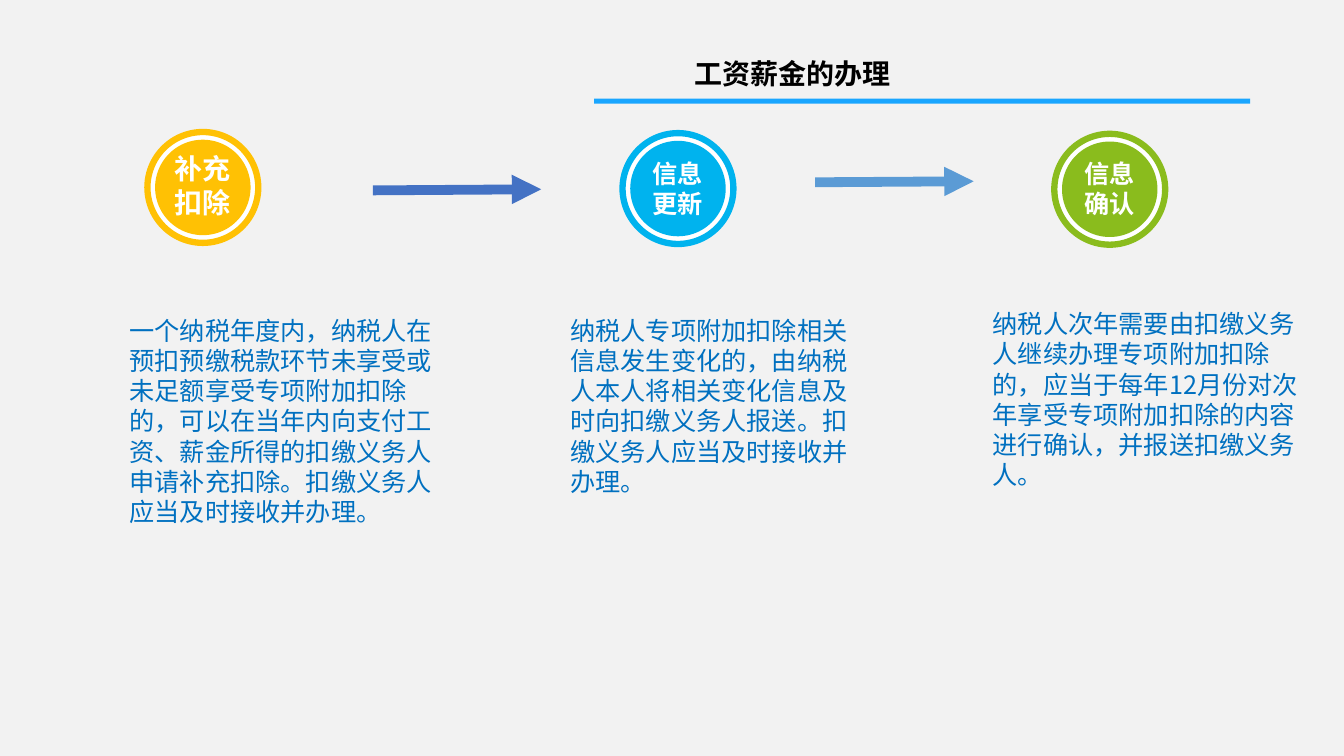
import pptx
import pptx.util
import pptx.dml.color
import pptx.enum.lang
import pptx.enum.shapes
import pptx.enum.text
import pptx.oxml
import pptx.oxml.ns

Pt = pptx.util.Pt
RGB = pptx.dml.color.RGBColor.from_string
SHAPE = pptx.enum.shapes.MSO_SHAPE
ALIGN = pptx.enum.text.PP_ALIGN
ANCHOR = pptx.enum.text.MSO_ANCHOR
FONT = "Noto Sans CJK SC"
COLORS = {
    "background": "F2F2F2", "rule": "1AA6FF", "title": "000000",
    "body": "0070C0", "white": "FFFFFF",
    "yellow": "FFC104", "cyan": "00B3EE", "green": "8ABC1D",
    "dark_arrow": "4472C4", "light_arrow": "5B9BD5",
}


def write(shape, lines, size, color, bold, align, anchor, latin=FONT):
    frame = shape.text_frame
    frame.auto_size = pptx.enum.text.MSO_AUTO_SIZE.NONE
    frame.word_wrap = True
    frame.vertical_anchor = anchor
    for index, line in enumerate(lines):
        paragraph = frame.add_paragraph() if index else frame.paragraphs[0]
        paragraph.alignment = align
        # Keep punctuation inside the right margin
        paragraph._p.get_or_add_pPr().set("hangingPunct", "0")
        run = paragraph.add_run()
        run.text = line
        run.font.size = Pt(size)
        run.font.bold = bold
        run.font.color.rgb = RGB(COLORS[color])
        run.font.name = latin
        run.font.language_id = pptx.enum.lang.MSO_LANGUAGE_ID.SIMPLIFIED_CHINESE
        east_asian = pptx.oxml.parse_xml(
            f'<a:ea {pptx.oxml.ns.nsdecls("a")} typeface="{FONT}"/>')
        run._r.get_or_add_rPr().append(east_asian)


def add_filled(kind, left, top, width, height, fill, outline=None):
    shape = slide.shapes.add_shape(kind, Pt(left), Pt(top), Pt(width), Pt(height))
    shape.shadow.inherit = False
    shape.fill.solid()
    shape.fill.fore_color.rgb = RGB(COLORS[fill])
    if outline:
        shape.line.color.rgb = RGB(COLORS[outline])
        shape.line.width = Pt(4.5)
    else:
        shape.line.fill.background()


presentation = pptx.Presentation()
presentation.slide_width = Pt(960)
presentation.slide_height = Pt(540)
slide = presentation.slides.add_slide(presentation.slide_layouts[5])
slide.background.fill.solid()
slide.background.fill.fore_color.rgb = RGB(COLORS["background"])

# Title and rule
title = slide.shapes.title
title.left, title.top, title.width, title.height = Pt(489), Pt(36.7), Pt(356), Pt(31)
write(title, ["工资薪金的办理"], 20, "title", True, ALIGN.LEFT, ANCHOR.TOP, "Arial")
add_filled(SHAPE.RECTANGLE, 424.3, 70.4, 468.7, 3.6, "rule")

# Arrows between the steps
for start_x, start_y, end_x, end_y, color in [
    (266.4, 136, 386.6, 135.2, "dark_arrow"),
    (582.3, 130.2, 695.5, 129.5, "light_arrow"),
]:
    arrow = slide.shapes.add_connector(
        pptx.enum.shapes.MSO_CONNECTOR.STRAIGHT,
        Pt(start_x), Pt(start_y), Pt(end_x), Pt(end_y))
    arrow.line.color.rgb = RGB(COLORS[color])
    arrow.line.width = Pt(7)
    namespace = pptx.oxml.ns.nsdecls("a")
    arrow.line._get_or_add_ln().append(
        pptx.oxml.parse_xml(f'<a:tailEnd {namespace} type="triangle"/>'))
    arrow._element.spPr.append(pptx.oxml.parse_xml(f"<a:effectLst {namespace}/>"))

# Step badges: centre, label centre, colour, label, label size
RING, DISC, LABEL = 79.2, 68.2, 56
for center_x, center_y, label_x, label_y, color, lines, size in [
    (144.9, 133.9, 144.7, 132.2, "yellow", ["补充", "扣除"], 20),
    (484.3, 134.7, 483.9, 134.5, "cyan", ["信息", "更新"], 18),
    (792.7, 135.2, 792.5, 134.8, "green", ["信息", "确认"], 18),
]:
    for diameter, fill, outline in [(RING, "white", color), (DISC, color, None)]:
        add_filled(SHAPE.OVAL, center_x - diameter / 2, center_y - diameter / 2,
                   diameter, diameter, fill, outline)
    label = slide.shapes.add_textbox(
        Pt(label_x - LABEL / 2), Pt(label_y - LABEL / 2), Pt(LABEL), Pt(LABEL))
    write(label, lines, size, "white", True, ALIGN.CENTER, ANCHOR.MIDDLE)
    label.text_frame.word_wrap = False

# Step descriptions
for left, top, width, height, text in [
    (85.4, 221.5, 241.2, 187, "一个纳税年度内，纳税人在预扣预缴税款环节未享受或未足额享受专项附加扣除的，可以在当年内向支付工资、薪金所得的扣缴义务人申请补充扣除。扣缴义务人应当及时接收并办理。"),
    (400.3, 221.5, 223.2, 138, "纳税人专项附加扣除相关信息发生变化的，由纳税人本人将相关变化信息及时向扣缴义务人报送。扣缴义务人应当及时接收并办理。"),
    (702, 216.7, 237.6, 137, "纳税人次年需要由扣缴义务人继续办理专项附加扣除的，应当于每年12月份对次年享受专项附加扣除的内容进行确认，并报送扣缴义务人。"),
]:
    description = slide.shapes.add_textbox(Pt(left), Pt(top), Pt(width), Pt(height))
    write(description, [text], 18, "body", False, ALIGN.LEFT, ANCHOR.TOP)

presentation.save("out.pptx")
